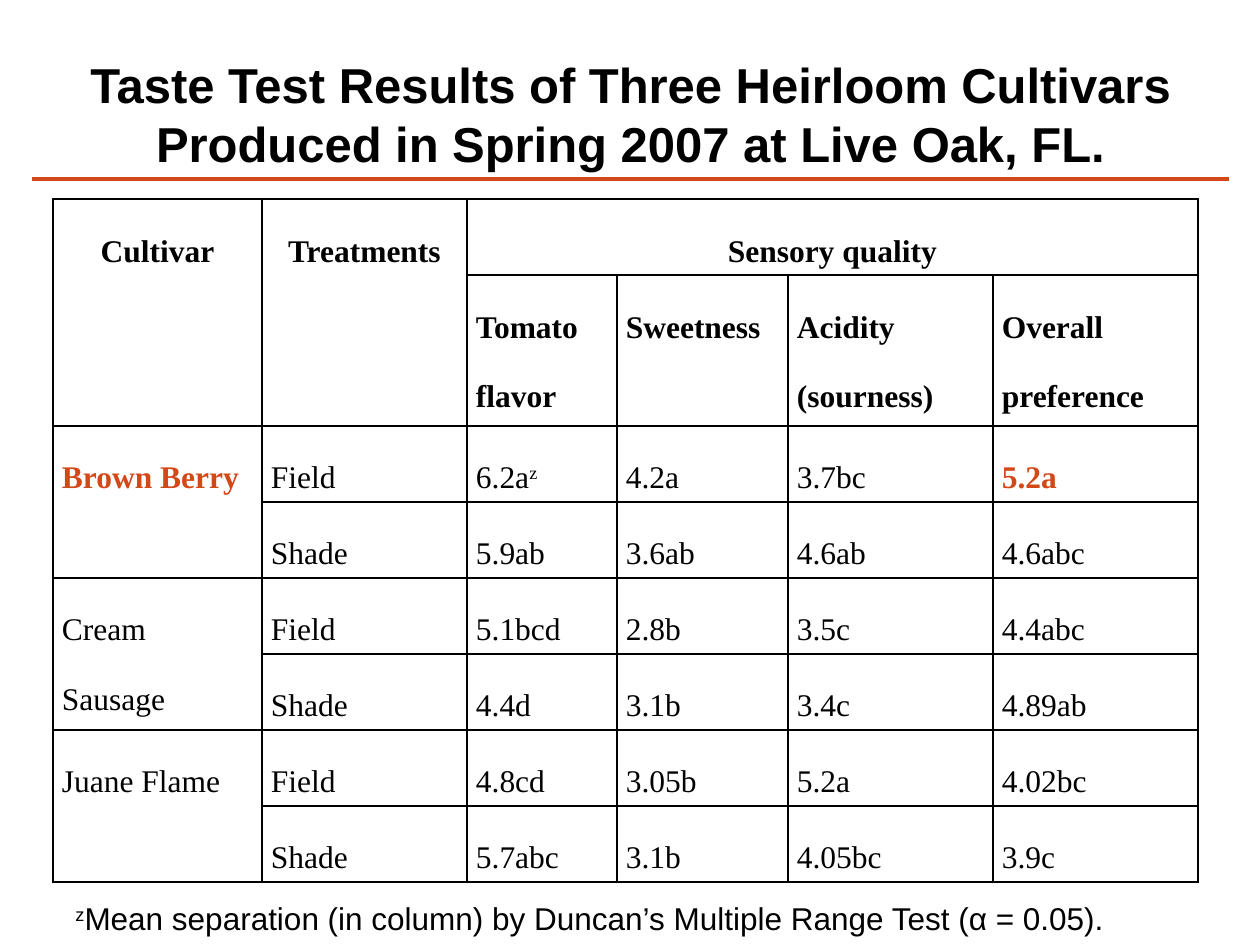
from lxml.etree import SubElement
from pptx import Presentation
from pptx.dml.color import RGBColor
from pptx.enum.shapes import MSO_CONNECTOR
from pptx.enum.text import MSO_ANCHOR, MSO_AUTO_SIZE, PP_ALIGN
from pptx.oxml.ns import qn
from pptx.util import Pt

SCALE = 914400 / 126
HUES = {"ink": "000000", "rust": "D34817", "paper": "FFFFFF"}

COLS = [209, 205, 150, 171, 205, 205]
ROWS = [76, 151] + [76] * 6
HEAD = [
    ["Cultivar", "Treatments", "Sensory quality", "", "", ""],
    ["", "", "Tomato flavor", "Sweetness", "Acidity\n(sourness)", "Overall preference"],
]
BODY = [
    ["Brown Berry", "Field", "6.2a^z", "4.2a", "3.7bc", "5.2a"],
    ["", "Shade", "5.9ab", "3.6ab", "4.6ab", "4.6abc"],
    ["Cream Sausage", "Field", "5.1bcd", "2.8b", "3.5c", "4.4abc"],
    ["", "Shade", "4.4d", "3.1b", "3.4c", "4.89ab"],
    ["Juane Flame", "Field", "4.8cd", "3.05b", "5.2a", "4.02bc"],
    ["", "Shade", "5.7abc", "3.1b", "4.05bc", "3.9c"],
]
SPANS = [(0, 0, 1, 0), (0, 1, 1, 1), (0, 2, 0, 5)] + [(r, 0, r + 1, 0) for r in (2, 4, 6)]
BEST = [(2, 0), (2, 5)]


def px(n):
    return round(n * SCALE)


def hue(name):
    return RGBColor.from_string(HUES[name])


class Deck:
    def __init__(self):
        self.file = Presentation()
        self.file.slide_width, self.file.slide_height = px(1260), px(945)
        self.slide = self.file.slides.add_slide(self.file.slide_layouts[5])

    def text(self, frame, words, face, size, tint="ink", bold=False, align=PP_ALIGN.LEFT, gap=1.0):
        for i, line in enumerate(words.split("\n")):
            para = frame.add_paragraph() if i else frame.paragraphs[0]
            para.alignment, para.line_spacing = align, gap
            font = para.font
            font.name, font.size, font.bold = face, Pt(size), bold
            font.color.rgb = hue(tint)
            for j, part in enumerate(line.split("^")):
                if part:
                    run = para.add_run()
                    run.text = part
                    if j % 2:
                        run._r.get_or_add_rPr().set("baseline", "30000")

    def title(self, x, y, w, h, words):
        shape = self.slide.shapes.title
        shape.left, shape.top, shape.width, shape.height = map(px, (x, y, w, h))
        frame = shape.text_frame
        frame.auto_size, frame.word_wrap = MSO_AUTO_SIZE.NONE, True
        frame.vertical_anchor = MSO_ANCHOR.MIDDLE
        frame.margin_top, frame.margin_bottom = px(6), px(13)
        self.text(frame, words, "Arial", 28, bold=True, align=PP_ALIGN.CENTER)

    def rule(self, x, y, w):
        line = self.slide.shapes.add_connector(MSO_CONNECTOR.STRAIGHT, px(x), px(y), px(x + w), px(y))
        line.line.color.rgb, line.line.width = hue("rust"), Pt(2)
        SubElement(line._element.spPr, qn("a:effectLst"))

    def note(self, x, y, w, h, words):
        frame = self.slide.shapes.add_textbox(px(x), px(y), px(w), px(h)).text_frame
        frame.word_wrap = True
        self.text(frame, words, "Arial", 18)

    def frame(self, cell):
        props = cell._tc.get_or_add_tcPr()
        for side in ("lnL", "lnR", "lnT", "lnB"):
            edge = SubElement(props, qn(f"a:{side}"), w=str(Pt(1)))
            fill = SubElement(edge, qn("a:solidFill"))
            SubElement(fill, qn("a:srgbClr"), val=HUES["ink"])
        cell.fill.solid()
        cell.fill.fore_color.rgb = hue("paper")

    def table(self, x, y, data):
        grid = self.slide.shapes.add_table(
            len(ROWS), len(COLS), px(x), px(y), px(sum(COLS)), px(sum(ROWS))).table
        grid.first_row = grid.horz_banding = False
        for col, w in zip(grid.columns, COLS):
            col.width = px(w)
        for row, h in zip(grid.rows, ROWS):
            row.height = px(h)
        for r, row in enumerate(data):
            for c, words in enumerate(row):
                cell = grid.cell(r, c)
                self.frame(cell)
                cell.margin_left = cell.margin_right = px(9)
                cell.margin_top = cell.margin_bottom = 0
                best = (r, c) in BEST
                if words:
                    self.text(cell.text_frame, words, "Times New Roman", 18,
                              "rust" if best else "ink", best or r < len(HEAD),
                              PP_ALIGN.CENTER if r == 0 else PP_ALIGN.LEFT, 2.0)
        for top, left, end, right in SPANS:
            grid.cell(top, left).merge(grid.cell(end, right))


def main():
    deck = Deck()
    deck.title(32, 38, 1197, 158,
               "Taste Test Results of Three Heirloom Cultivars Produced in Spring 2007 at Live Oak, FL.")
    deck.rule(32, 179, 1197)
    deck.table(53, 199, HEAD + BODY)
    deck.note(63, 893, 1155, 52,
              "^z^Mean separation (in column) by Duncan’s Multiple Range Test (α = 0.05).")
    deck.file.save("out.pptx")


if __name__ == "__main__":
    main()
